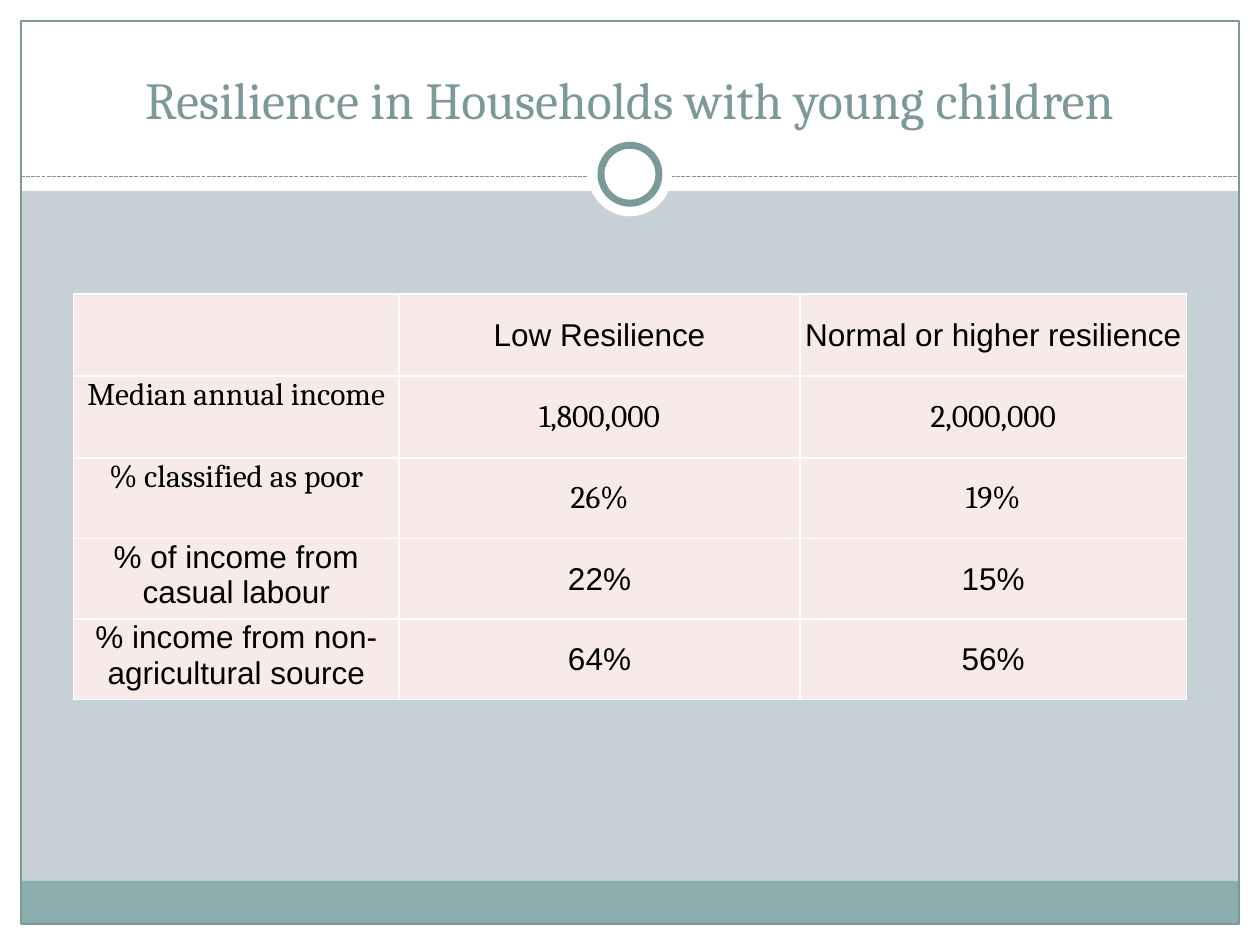
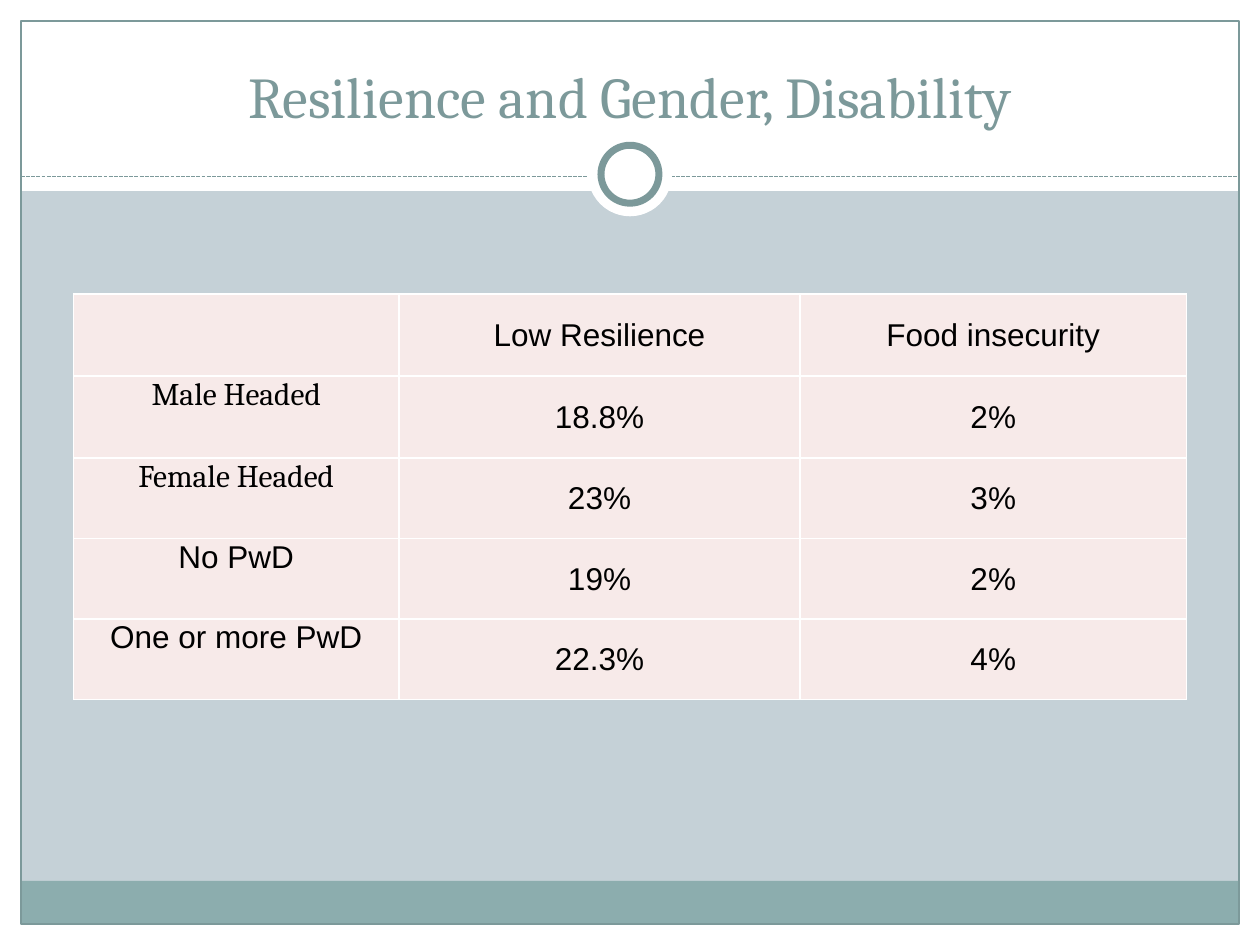
import dataclasses

import pptx
import pptx.dml.color
import pptx.enum.dml
import pptx.enum.shapes
import pptx.enum.text
import pptx.oxml
import pptx.oxml.ns
import pptx.util

SHAPE = pptx.enum.shapes.MSO_SHAPE
ANCHOR = pptx.enum.text.MSO_ANCHOR
CENTER = pptx.enum.text.PP_ALIGN.CENTER

# The slide is a grid of 60 columns by 45 rows; one square is 1/6 inch.
COLUMNS, ROWS = 60, 45
UNIT = pptx.util.Inches(10) / COLUMNS


@dataclasses.dataclass(frozen=True)
class Theme:
    background: str = "C5D1D7"
    white: str = "FFFFFF"
    accent: str = "7C999A"
    footer: str = "8CADAE"
    cell: str = "F7EAE9"
    text: str = "000000"
    serif: str = "Cambria"
    sans: str = "Arial"
    cell_size: float = 18
    thin: float = 0.75
    border: float = 1
    ring: float = 4


THEME = Theme()

# Table layout in grid units
TABLE_LEFT, TABLE_TOP = 3.5, 14
TABLE_COLUMNS = (15.5, 19.1, 18.4)
TABLE_ROWS = (3.9, 3.9, 3.84, 3.84, 3.84)
SERIF_ROWS = (1, 2)

# Each slide: title, title size, number of serif columns in SERIF_ROWS, table
SLIDES = [
    ("Resilience in Households with young children", 29.7, 3, [
        ("", "Low Resilience", "Normal or higher resilience"),
        ("Median annual income", "1,800,000", "2,000,000"),
        ("% classified as poor", "26%", "19%"),
        ("% of income from casual labour", "22%", "15%"),
        ("% income from non-agricultural source", "64%", "56%"),
    ]),
    ("Resilience and Gender, Disability", 33, 1, [
        ("", "Low Resilience", "Food insecurity"),
        ("Male Headed", "18.8%", "2%"),
        ("Female Headed", "23%", "3%"),
        ("No PwD", "19%", "2%"),
        ("One or more PwD", "22.3%", "4%"),
    ]),
]


def grid(*lengths):
    return [pptx.util.Emu(round(length * UNIT)) for length in lengths]


def rgb(color):
    return pptx.dml.color.RGBColor.from_string(color)


def paint(fill, color):
    fill.solid()
    fill.fore_color.rgb = rgb(color)


def add_shape(slide, kind, box, fill=None, line_width=None):
    shape = slide.shapes.add_shape(kind, *grid(*box))
    shape.shadow.inherit = False
    if fill:
        paint(shape.fill, fill)
    else:
        shape.fill.background()
    if line_width:
        shape.line.color.rgb = rgb(THEME.accent)
        shape.line.width = pptx.util.Pt(line_width)
    else:
        shape.line.fill.background()


def add_divider(slide, row):
    divider = slide.shapes.add_connector(
        pptx.enum.shapes.MSO_CONNECTOR.STRAIGHT, *grid(1, row, COLUMNS - 1, row))
    divider.line.color.rgb = rgb(THEME.accent)
    divider.line.width = pptx.util.Pt(THEME.thin)
    divider.line.dash_style = pptx.enum.dml.MSO_LINE.SQUARE_DOT
    pptx.oxml.ns.qn("a:effectLst")
    divider._element.spPr.append(pptx.oxml.parse_xml(
        f'<a:effectLst {pptx.oxml.ns.nsdecls("a")}/>'))


def add_frame(slide):
    # White margins and header
    for box in ((0, ROWS - 1, COLUMNS, 1), (0, 0, COLUMNS, 9.1),
                (0, 0, 1, ROWS), (COLUMNS - 1, 0, 1, ROWS)):
        add_shape(slide, SHAPE.RECTANGLE, box, THEME.white)
    # Footer band and outline
    add_shape(slide, SHAPE.RECTANGLE, (1, 41.95, COLUMNS - 2, 2.05), THEME.footer)
    add_shape(slide, SHAPE.RECTANGLE, (1, 1, COLUMNS - 2, ROWS - 2),
              line_width=THEME.thin)
    # Divider with ring
    add_divider(slide, 8.4)
    for diameter, line_width in ((4, None), (2.76, THEME.ring)):
        box = ((COLUMNS - diameter) / 2, 8.3 - diameter / 2, diameter, diameter)
        add_shape(slide, SHAPE.OVAL, box, THEME.white, line_width)


def write(frame, text, font_name, size, color):
    paragraph = frame.paragraphs[0]
    paragraph.text = text
    paragraph.alignment = CENTER
    font = paragraph.font
    font.name, font.size, font.bold = font_name, pptx.util.Pt(size), False
    font.color.rgb = rgb(color)


def add_title(slide, text, size):
    frame = slide.shapes.add_textbox(*grid(2, 1.5, COLUMNS - 4, 5)).text_frame
    frame.word_wrap = True
    frame.vertical_anchor = ANCHOR.BOTTOM
    write(frame, text, THEME.serif, size, THEME.accent)


def add_borders(cell):
    properties = cell._tc.get_or_add_tcPr()
    width = pptx.util.Pt(THEME.border)
    for index, side in enumerate(("lnL", "lnR", "lnT", "lnB")):
        properties.insert(index, pptx.oxml.parse_xml(
            f'<a:{side} {pptx.oxml.ns.nsdecls("a")} w="{width}"><a:solidFill>'
            f'<a:srgbClr val="{THEME.white}"/></a:solidFill></a:{side}>'))


def add_table(slide, content, serif_columns):
    table = slide.shapes.add_table(
        len(TABLE_ROWS), len(TABLE_COLUMNS),
        *grid(TABLE_LEFT, TABLE_TOP, sum(TABLE_COLUMNS), sum(TABLE_ROWS))).table
    table.first_row = table.horz_banding = False
    for column, width in zip(table.columns, grid(*TABLE_COLUMNS)):
        column.width = width
    for row, height in zip(table.rows, grid(*TABLE_ROWS)):
        row.height = height
    for row_index, texts in enumerate(content):
        for column_index, text in enumerate(texts):
            cell = table.cell(row_index, column_index)
            paint(cell.fill, THEME.cell)
            add_borders(cell)
            cell.margin_left = cell.margin_right = cell.margin_top = pptx.util.Inches(0.01)
            cell.margin_bottom = 0
            cell.vertical_anchor = ANCHOR.MIDDLE if column_index else ANCHOR.TOP
            is_serif = row_index in SERIF_ROWS and column_index < serif_columns
            write(cell.text_frame, text, THEME.serif if is_serif else THEME.sans,
                  THEME.cell_size, THEME.text)


def main():
    presentation = pptx.Presentation()
    presentation.slide_width, presentation.slide_height = grid(COLUMNS, ROWS)
    paint(presentation.slide_master.background.fill, THEME.background)
    blank_layout = presentation.slide_layouts[6]
    for title, title_size, serif_columns, content in SLIDES:
        slide = presentation.slides.add_slide(blank_layout)
        add_frame(slide)
        add_title(slide, title, title_size)
        add_table(slide, content, serif_columns)
    presentation.save("out.pptx")


if __name__ == "__main__":
    main()
